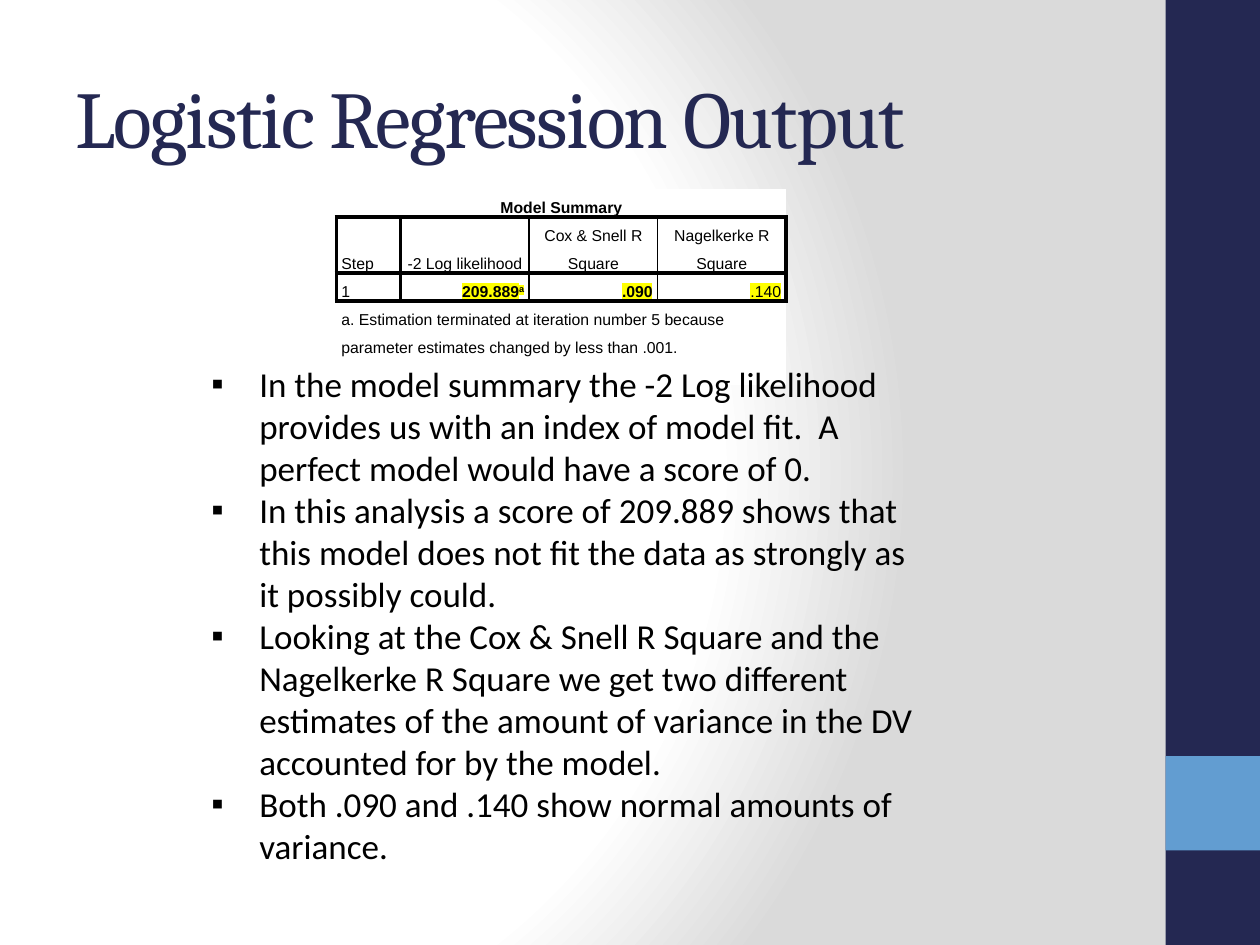
from lxml import etree
from pptx import Presentation
from pptx.dml.color import RGBColor
from pptx.enum.shapes import MSO_SHAPE
from pptx.enum.text import MSO_ANCHOR, PP_ALIGN
from pptx.oxml import parse_xml
from pptx.oxml.ns import nsdecls, qn
from pptx.util import Inches, Pt

LEFT, CENTER, RIGHT = PP_ALIGN.LEFT, PP_ALIGN.CENTER, PP_ALIGN.RIGHT
TOP, MIDDLE, BOTTOM = MSO_ANCHOR.TOP, MSO_ANCHOR.MIDDLE, MSO_ANCHOR.BOTTOM
NAVY, BLUE, BLACK, WHITE, YELLOW = "242852", "629DD1", "000000", "FFFFFF", "FFFF00"

TITLE = "Logistic Regression Output"
SIDEBAR = [(0, 7.5, NAVY), (6, 0.75, BLUE)]  # top, height, colour

CAPTION = "Model Summary"
HEADERS = ["Step", "-2 Log likelihood", "Cox & Snell R Square", "Nagelkerke R Square"]
VALUES = [  # text, bold, highlighted, superscript
    ("1", False, False, ""),
    ("209.889", True, True, "a"),
    (".090", True, True, ""),
    (".140", False, True, ""),
]
FOOTNOTE = ("a. Estimation terminated at iteration number 5 because "
            "parameter estimates changed by less than .001.")
COLUMN_WIDTHS = [0.51, 1.02, 1.02, 1.02]
LINE_HEIGHT = 16  # points
ROW_LINES = [1, 2, 1, 3]
THICK, THIN = 2.25, 1
VERTICAL_RULES = [THICK, THICK, THIN, THIN, THICK]

BULLETS = [
    "In the model summary the -2 Log likelihood provides us with an index of model fit.  "
    "A perfect model would have a score of 0.",
    "In this analysis a score of 209.889 shows that this model does not fit the data "
    "as strongly as it possibly could.",
    "Looking at the Cox & Snell R Square and the Nagelkerke R Square we get two different "
    "estimates of the amount of variance in the DV accounted for by the model.",
    "Both .090 and .140 show normal amounts of variance.",
]


def rgb(color):
    return RGBColor.from_string(color)


def add_run(p, text, size, font, color=BLACK, bold=False):
    r = p.add_run()
    r.text = text
    r.font.size = Pt(size)
    r.font.name = font
    r.font.bold = bold
    r.font.color.rgb = rgb(color)
    return r


def add_textbox(s, x, y, w, h, anchor=TOP):
    tf = s.shapes.add_textbox(Inches(x), Inches(y), Inches(w), Inches(h)).text_frame
    tf.word_wrap = True
    tf.vertical_anchor = anchor
    return tf


def set_background(s):
    stops = "".join(f'<a:gs pos="{pos * 1000}"><a:srgbClr val="{color}"/></a:gs>'
                    for pos, color in [(0, WHITE), (75, WHITE), (100, "DADADA")])
    s.element.cSld.insert(0, parse_xml(
        f'<p:bg {nsdecls("p", "a")}><p:bgPr><a:gradFill rotWithShape="1">'
        f'<a:gsLst>{stops}</a:gsLst><a:path path="circle">'
        '<a:fillToRect l="20000" t="50000" r="100000" b="50000"/></a:path>'
        '</a:gradFill><a:effectLst/></p:bgPr></p:bg>'))


def set_borders(cell, **widths):
    """Draw black borders; keys are L, R, T, B in that order, values are points."""
    tcPr = cell._tc.get_or_add_tcPr()
    for i, (side, width) in enumerate(widths.items()):
        tcPr.insert(i, parse_xml(
            f'<a:ln{side} {nsdecls("a")} w="{Pt(width)}"><a:solidFill>'
            f'<a:srgbClr val="{BLACK}"/></a:solidFill></a:ln{side}>'))


def highlight(r):
    mark = parse_xml(f'<a:highlight {nsdecls("a")}><a:srgbClr val="{YELLOW}"/></a:highlight>')
    r.font._element.find(qn("a:solidFill")).addnext(mark)


def fill_cell(cell, text, align=LEFT, anchor=TOP, bold=False, marked=False, superscript=""):
    cell.fill.solid()
    cell.fill.fore_color.rgb = rgb(WHITE)
    cell.margin_top = cell.margin_bottom = 0
    cell.margin_left = cell.margin_right = Inches(0.04)
    cell.vertical_anchor = anchor
    p = cell.text_frame.paragraphs[0]
    p.alignment = align
    p.line_spacing = Pt(LINE_HEIGHT)
    runs = [add_run(p, text, 9, "Arial", bold=bold)]
    if superscript:
        runs.append(add_run(p, superscript, 9, "Arial", bold=bold))
        runs[1].font._element.set("baseline", "30000")
    if marked:
        for r in runs:
            highlight(r)


def add_summary_table(s):
    heights = [Pt(LINE_HEIGHT * n) for n in ROW_LINES]
    frame = s.shapes.add_table(len(heights), len(COLUMN_WIDTHS), Inches(2.67), Inches(1.5),
                               Inches(sum(COLUMN_WIDTHS)), sum(heights))
    table = frame.table
    table.first_row = table.horz_banding = False
    style = table._tbl.tblPr.find(qn("a:tableStyleId"))
    style.text = "{2D5ABB26-0587-4C30-8999-92F81FD0307C}"  # no style, no grid
    for column, width in zip(table.columns, COLUMN_WIDTHS):
        column.width = Inches(width)
    for row, height in zip(table.rows, heights):
        row.height = height

    last = len(COLUMN_WIDTHS) - 1
    for row in (0, 3):
        table.cell(row, 0).merge(table.cell(row, last))
    fill_cell(table.cell(0, 0), CAPTION, CENTER, MIDDLE, bold=True)
    fill_cell(table.cell(3, 0), FOOTNOTE)
    for col, (header, value) in enumerate(zip(HEADERS, VALUES)):
        fill_cell(table.cell(1, col), header, CENTER if col else LEFT, BOTTOM)
        text, bold, marked, superscript = value
        fill_cell(table.cell(2, col), text, RIGHT if col else LEFT, TOP,
                  bold, marked, superscript)
        set_borders(table.cell(0, col), B=THICK)
        for row in (1, 2):
            set_borders(table.cell(row, col), L=VERTICAL_RULES[col],
                        R=VERTICAL_RULES[col + 1], T=THICK, B=THICK)
        set_borders(table.cell(3, col), T=THICK)


def add_bullets(s):
    tf = add_textbox(s, 1.58, 2.83, 5.92, 4.14)
    for i, text in enumerate(BULLETS):
        p = tf.add_paragraph() if i else tf.paragraphs[0]
        pPr = p._p.get_or_add_pPr()
        pPr.set("marL", str(Inches(0.38)))
        pPr.set("indent", str(-Inches(0.38)))
        etree.SubElement(pPr, qn("a:buFont"), typeface="Arial")
        etree.SubElement(pPr, qn("a:buChar"), char="▪")
        add_run(p, text, 20, "Calibri")


def main():
    prs = Presentation()
    prs.slide_width, prs.slide_height = Inches(10), Inches(7.5)
    s = prs.slides.add_slide(prs.slide_layouts[6])
    set_background(s)
    for top, height, color in SIDEBAR:
        bar = s.shapes.add_shape(MSO_SHAPE.RECTANGLE, Inches(9.25), Inches(top),
                                 Inches(0.75), Inches(height))
        bar.shadow.inherit = False
        bar.fill.solid()
        bar.fill.fore_color.rgb = rgb(color)
        bar.line.fill.background()
    tf = add_textbox(s, 0.5, 0.3, 8.33, 1.25, MIDDLE)
    title = add_run(tf.paragraphs[0], TITLE, 46, "Cambria", NAVY)
    title.font._element.set("spc", "-100")
    add_summary_table(s)
    add_bullets(s)
    prs.save("out.pptx")


if __name__ == "__main__":
    main()
